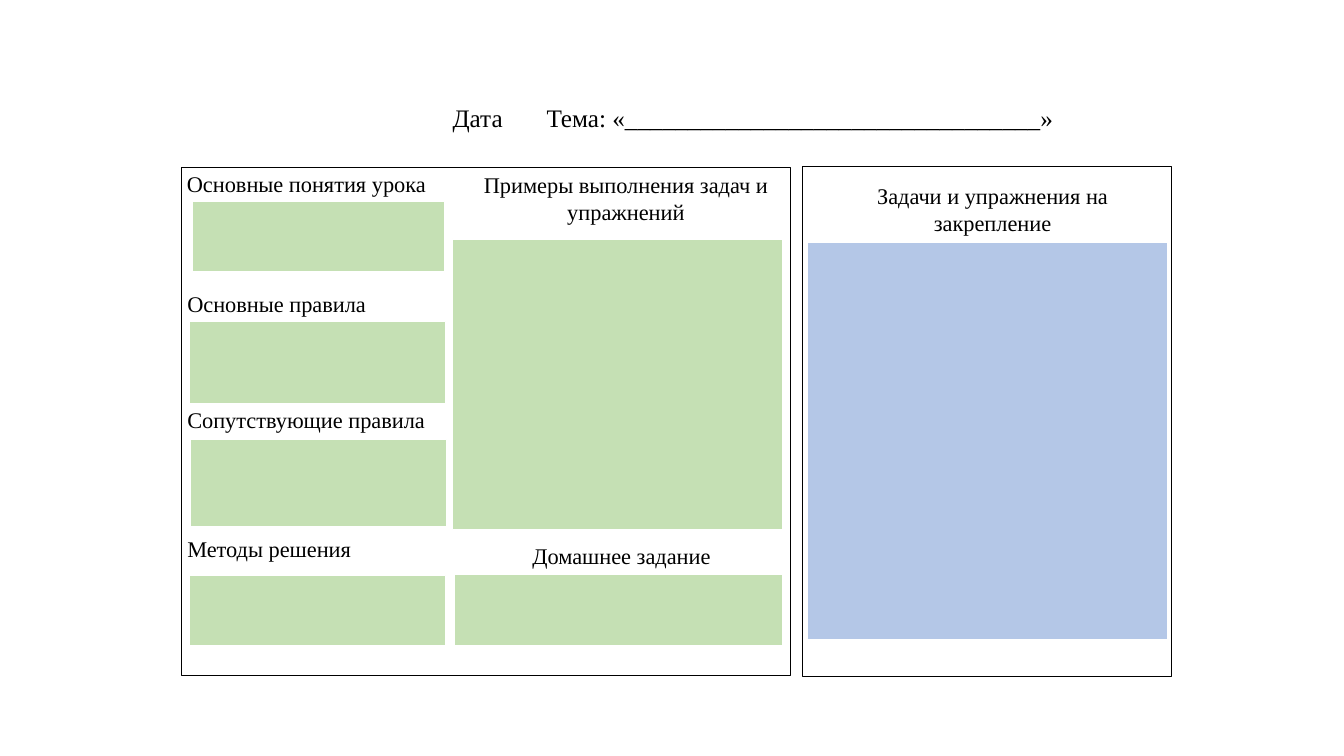
"""Lesson board layout: a topic line, a main board and a practice board."""
from lxml import etree
from pptx import Presentation, util as u
from pptx.dml.color import RGBColor
from pptx.enum import shapes, text
from pptx.oxml.ns import qn

GREEN, BLUE, WHITE, BLACK = "C5E0B4", "B4C7E7", "FFFFFF", "000000"
LEFT, CENTER = text.PP_ALIGN.LEFT, text.PP_ALIGN.CENTER

SECTIONS = [
    ("Основные понятия урока", (4.46, 4.17, 8.53, 0.94), LEFT,
     (4.85, 5.08, 6.35, 1.78), GREEN),
    ("Основные правила", (4.47, 7.19, 10.34, 0.94), LEFT,
     (4.78, 8.1, 6.45, 2.08), GREEN),
    ("Сопутствующие правила", (4.47, 10.11, 9.04, 0.94), LEFT,
     (4.8, 11.07, 6.45, 2.21), GREEN),
    ("Методы решения", (4.47, 13.36, 9.04, 0.94), LEFT,
     (4.78, 14.5, 6.45, 1.78), GREEN),
    ("Примеры выполнения задач и упражнений", (11.51, 4.19, 8.53, 1.63), CENTER,
     (11.4, 6.02, 8.33, 7.32), GREEN),
    ("Домашнее задание", (11.4, 13.54, 8.53, 0.94), CENTER,
     (11.46, 14.48, 8.26, 1.8), GREEN),
    ("Задачи и упражнения на закрепление", (20.75, 4.47, 8.53, 1.63), CENTER,
     (20.35, 6.1, 9.09, 10.01), BLUE),
]
BOARDS = [(4.57, 4.22, 15.34, 12.8), (20.22, 4.19, 9.3, 12.85)]


def color(fmt, value):
    """Give a fill or font colour format a hex colour."""
    fmt.rgb = RGBColor.from_string(value)


def cm(box):
    """Turn a box in centimetres into lengths."""
    return [u.Cm(v) for v in box]


def write(sp, content, size=16, align=LEFT, font="Times New Roman", fill=BLACK):
    """Write one formatted paragraph into a shape and return it."""
    tf = sp.text_frame
    tf.word_wrap = True
    tf.auto_size = text.MSO_AUTO_SIZE.NONE
    tf.vertical_anchor = text.MSO_ANCHOR.TOP
    p = tf.paragraphs[0]
    p.alignment = align
    r = p.add_run()
    r.text = content
    r.font.size, r.font.name = u.Pt(size), font
    color(r.font.color, fill)
    return p


def add_tab_stop(p, pos):
    """Add a left tab stop to a paragraph."""
    tabs = etree.SubElement(p._p.get_or_add_pPr(), qn("a:tabLst"))
    etree.SubElement(tabs, qn("a:tab"), pos=str(int(pos)), algn="l")


def add_title(s, content, box):
    """Place and fill the title placeholder."""
    sp = s.shapes.title
    sp.left, sp.top, sp.width, sp.height = cm(box)
    add_tab_stop(write(sp, content, size=18), u.Cm(2.37))


def add_rect(s, box, fill=None, line=BLACK, weight=0.25):
    """Add a rectangle, unfilled unless a colour is given."""
    sp = s.shapes.add_shape(shapes.MSO_SHAPE.RECTANGLE, *cm(box))
    sp.shadow.inherit = False
    if fill:
        sp.fill.solid()
        color(sp.fill.fore_color, fill)
    else:
        sp.fill.background()
    color(sp.line.color, line)
    sp.line.width = u.Pt(weight)


def add_section(s, label, label_box, align, box, fill):
    """Add a heading and its coloured area."""
    write(s.shapes.add_textbox(*cm(label_box)), label, align=align)
    add_rect(s, box, fill=fill, line=WHITE, weight=1)


def main():
    """Build and save the slide."""
    prs = Presentation()
    prs.slide_width, prs.slide_height = u.Cm(33.87), u.Cm(19.05)
    s = prs.slides.add_slide(prs.slide_layouts.get_by_name("Title Only"))
    add_title(s, "Дата\tТема: «" + "_" * 33 + "»", (11.15, 2.44, 20.14, 1.02))
    for section in SECTIONS:
        add_section(s, *section)
    for board in BOARDS:
        add_rect(s, board)
    prs.save("out.pptx")


if __name__ == "__main__":
    main()
